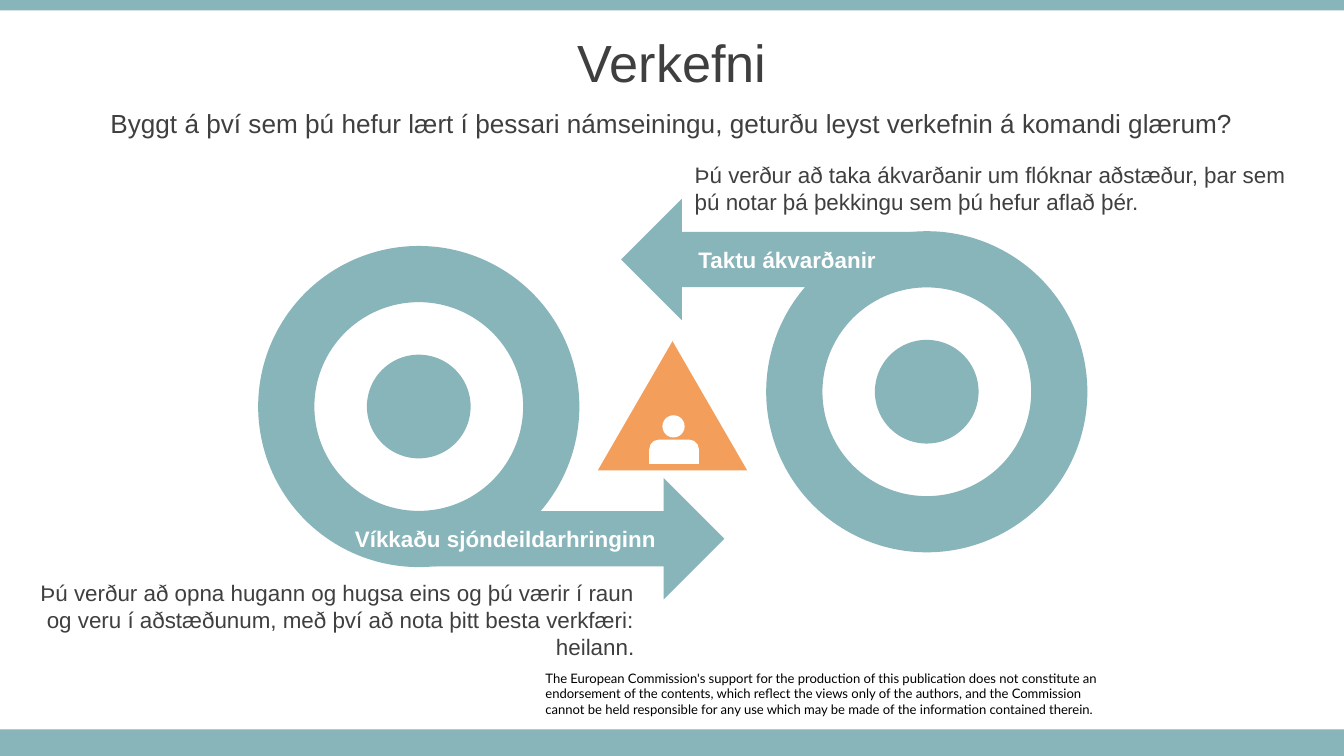
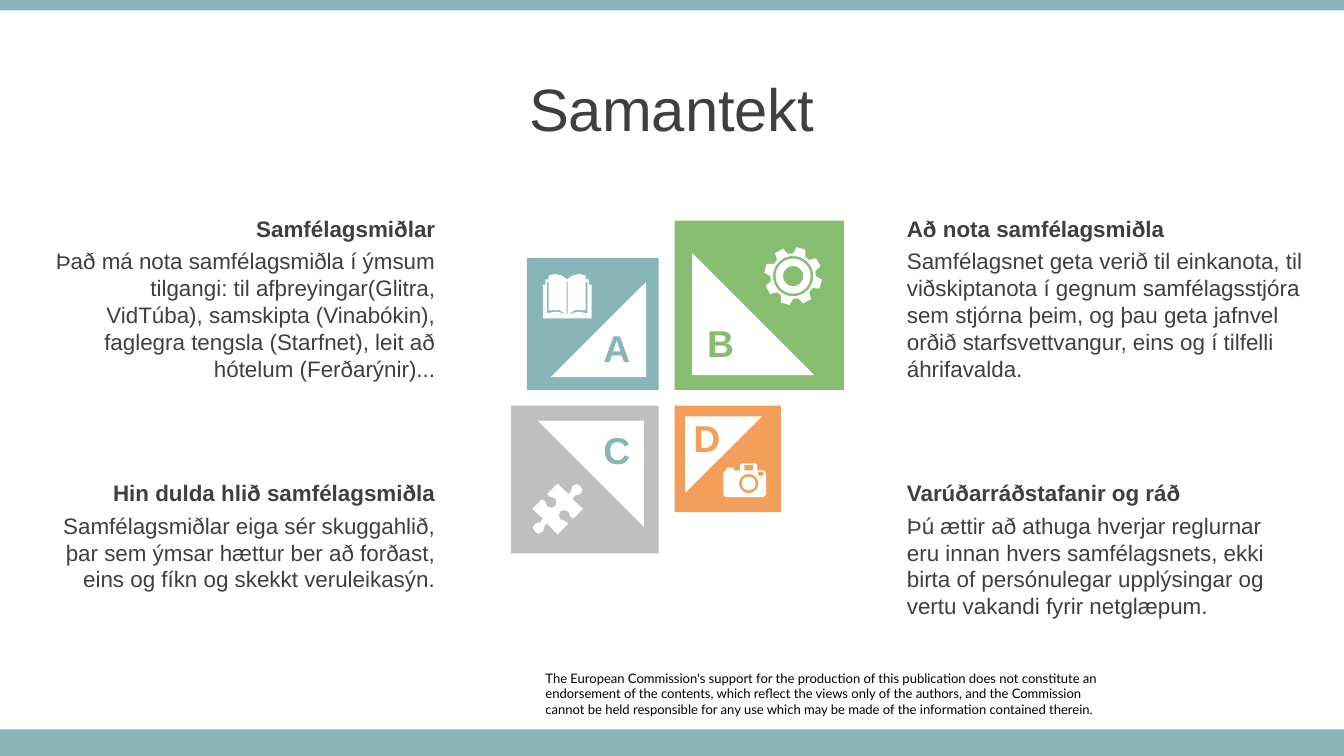
from math import cos, radians, sin

from pptx import Presentation
from pptx.dml.color import RGBColor
from pptx.enum.shapes import MSO_SHAPE
from pptx.enum.text import MSO_ANCHOR, PP_ALIGN
from pptx.util import Cm, Pt

LEFT, CENTER, RIGHT = PP_ALIGN.LEFT, PP_ALIGN.CENTER, PP_ALIGN.RIGHT
TOP, MIDDLE = MSO_ANCHOR.TOP, MSO_ANCHOR.MIDDLE
RECTANGLE, OVAL, DONUT = MSO_SHAPE.RECTANGLE, MSO_SHAPE.OVAL, MSO_SHAPE.DONUT
ARROW, TRIANGLE = MSO_SHAPE.RIGHT_ARROW, MSO_SHAPE.ISOSCELES_TRIANGLE
CORNER, SHOULDERS = MSO_SHAPE.RIGHT_TRIANGLE, MSO_SHAPE.ROUND_2_SAME_RECTANGLE
TITLE_ONLY = 5

COLORS = {
    "teal": "87B5BA", "green": "86BD70", "orange": "F39E5A", "gray": "BFBFBF",
    "text": "3F3F3F", "white": "FFFFFF", "black": "000000",
}
WIDTH, HEIGHT = 25.4, 14.29
UNITS_PER_CM = 1000
DISCLAIMER = (
    "The European Commission's support for the production of this publication "
    "does not constitute an endorsement of the contents, which reflect the views "
    "only of the authors, and the Commission",
    "cannot be held responsible for any use which may be made of the information "
    "contained therein.",
)


def color(name):
    return RGBColor.from_string(COLORS[name])


class Builder:
    """Holds the style and the current slide; all lengths are in centimetres."""

    def __init__(self):
        self.deck = Presentation()
        self.deck.slide_width, self.deck.slide_height = Cm(WIDTH), Cm(HEIGHT)
        self.page = None

    def new_page(self, title, top, size):
        self.page = self.deck.slides.add_slide(self.deck.slide_layouts[TITLE_ONLY])
        box = self.page.shapes.title
        box.left, box.top, box.width, box.height = Cm(0), Cm(top), Cm(WIDTH), Cm(1.6)
        self.fill_text(box, [title], size=size, align=CENTER, anchor=MIDDLE)
        self.shape(RECTANGLE, 0, 13.79, WIDTH, 0.5, "teal")
        self.shape(RECTANGLE, 0, 0, WIDTH, 0.2, "teal")
        box = self.text(10.31, 12.67, 10.59, 0.89, *DISCLAIMER,
                        size=7, font="Lato", fill="black")
        frame = box.text_frame
        frame.margin_left = frame.margin_right = Cm(0)
        frame.margin_top = frame.margin_bottom = Cm(0)

    def fill_text(self, box, lines, size=12, font="Arial", fill="text", bold=False,
                  align=LEFT, anchor=TOP, spacing=None):
        frame = box.text_frame
        frame.word_wrap, frame.vertical_anchor = True, anchor
        frame.text = "\n".join(lines)
        for para in frame.paragraphs:
            para.alignment, para.line_spacing = align, spacing
            para.font.name, para.font.size, para.font.bold = font, Pt(size), bold
            para.font.color.rgb = color(fill)

    def text(self, left, top, width, height, *lines, **style):
        box = self.page.shapes.add_textbox(Cm(left), Cm(top), Cm(width), Cm(height))
        self.fill_text(box, lines, **style)
        return box

    def paint(self, shape, fill):
        shape.shadow.inherit = False
        shape.fill.solid()
        shape.fill.fore_color.rgb = color(fill)
        shape.line.fill.background()

    def shape(self, kind, left, top, width, height, fill, turn=0, adjust=()):
        shape = self.page.shapes.add_shape(
            kind, Cm(left), Cm(top), Cm(width), Cm(height))
        shape.rotation = turn
        for index, value in enumerate(adjust):
            shape.adjustments[index] = value
        self.paint(shape, fill)

    def outline(self, *contours, fill="white"):
        """Draw closed contours as one shape; inner contours are holes."""
        scaled = [[(x * UNITS_PER_CM, y * UNITS_PER_CM) for x, y in contour]
                  for contour in contours]
        builder = self.page.shapes.build_freeform(
            *scaled[0][0], scale=Cm(1) / UNITS_PER_CM)
        builder.add_line_segments(scaled[0][1:], close=True)
        for contour in scaled[1:]:
            builder.move_to(*contour[0])
            builder.add_line_segments(contour[1:], close=True)
        self.paint(builder.convert_to_shape(), fill)


# Contours for the icons
def polar(x, y, radius, degrees):
    return x + radius * sin(radians(degrees)), y - radius * cos(radians(degrees))


def circle(x, y, radius):
    return [polar(x, y, radius, angle) for angle in range(0, 360, 8)]


def block(left, top, width, height):
    return [(left, top), (left + width, top),
            (left + width, top + height), (left, top + height)]


def draw_target(builder, left, top, turned):
    size, dot, arrow_width, arrow_height = 6.07, 1.96, 5.51, 2.29
    arrow_left, arrow_top = 3.3, 4.39
    if turned:
        arrow_left = size - arrow_left - arrow_width
        arrow_top = size - arrow_top - arrow_height
    turn, inset = 180 * turned, (size - dot) / 2
    builder.shape(DONUT, left, top, size, size, "teal", turn, [0.175])
    builder.shape(ARROW, left + arrow_left, top + arrow_top,
                  arrow_width, arrow_height, "teal", turn, [0.455, 0.5])
    builder.shape(OVAL, left + inset, top + inset, dot, dot, "teal")


def draw_book(builder, x=10.72):
    half = [(0, 5.28), (0.1, 5.21), (0.23, 5.18), (0.35, 5.21), (0.35, 5.28),
            (0.41, 5.28), (0.41, 5.38), (0.46, 5.38), (0.46, 6.02)]
    edge = [(0.35, 5.33), (0.38, 5.33), (0.38, 5.92), (0.2, 5.89),
            (0.02, 5.94), (0.15, 5.86), (0.35, 5.87)]
    cover = ([(x + dx, y) for dx, y in half]
             + [(x - dx, y) for dx, y in reversed(half[1:])])
    edges = [[(x + side * dx, y) for dx, y in edge] for side in (1, -1)]
    builder.outline(cover, *edges, block(x - 0.01, 5.33, 0.02, 0.6))


def draw_gear(builder, x=14.99, y=5.22):
    teeth = [polar(x, y, radius, 16 + 45 * tooth + offset)
             for tooth in range(8)
             for offset, radius in ((-16, 0.43), (-9, 0.55), (9, 0.55), (16, 0.43))]
    builder.outline(teeth, *(circle(x, y, radius) for radius in (0.38, 0.33, 0.19)))


def draw_puzzle(builder, x=10.54, y=9.62):
    half = [(0.48, 0), (0.3, 0.18), (0.24, 0.15), (0.2, 0.05), (0.12, 0.02),
            (0.05, 0.05), (0.02, 0.12), (0.05, 0.2), (0.14, 0.23), (0.2, 0.28),
            (0, 0.48), (-0.2, 0.28), (-0.24, 0.31), (-0.28, 0.43), (-0.36, 0.47),
            (-0.43, 0.43), (-0.47, 0.36), (-0.43, 0.28), (-0.32, 0.25), (-0.28, 0.18)]
    builder.outline([(x + side * dx, y + side * dy)
                     for side in (1, -1) for dx, dy in half])


def draw_camera(builder, x=14.15, y=9.14):
    body = [(13.67, 8.94), (13.72, 8.89), (13.74, 8.84), (13.87, 8.84),
            (13.87, 8.89), (13.99, 8.89), (13.99, 8.79), (14.02, 8.76),
            (14.28, 8.76), (14.31, 8.79), (14.31, 8.89), (14.43, 8.89),
            (14.48, 8.94), (14.48, 9.35), (14.43, 9.4), (13.72, 9.4), (13.67, 9.35)]
    builder.outline(body, circle(x, y, 0.18), circle(x, y, 0.13),
                    block(14.07, 8.79, 0.16, 0.1), block(14.33, 8.92, 0.1, 0.07))


def tasks_page(builder):
    builder.new_page("Verkefni", 0.36, 28)
    builder.text(0, 1.96, WIDTH, 0.79,
                 "Byggt á því sem þú hefur lært í þessari námseiningu, geturðu leyst "
                 "verkefnin á komandi glærum?",
                 size=14, align=CENTER, anchor=MIDDLE, spacing=0.9)
    draw_target(builder, 4.88, 4.65, turned=False)
    draw_target(builder, 14.48, 4.37, turned=True)

    # Person in the triangle
    builder.shape(TRIANGLE, 11.3, 6.45, 2.82, 2.44, "orange")
    builder.shape(OVAL, 12.52, 7.85, 0.42, 0.42, "white")
    builder.shape(SHOULDERS, 12.27, 8.31, 0.94, 0.46, "white", adjust=[0.4, 0])

    # Explanations and arrow labels
    builder.text(12.88, 2.92, 12.01, 1.8,
                 "Þú verður að taka ákvarðanir um flóknar aðstæður, þar sem þú notar "
                 "þá þekkingu sem þú hefur aflað þér.")
    builder.text(0.3, 10.82, 11.94, 2.31,
                 "Þú verður að opna hugann og hugsa eins og þú værir í raun og veru í "
                 "aðstæðunum, með því að nota þitt besta verkfæri: heilann.", align=RIGHT)
    builder.text(6.15, 9.8, 6.5, 1.27, "Víkkaðu sjóndeildarhringinn",
                 fill="white", bold=True, align=RIGHT)
    builder.text(12.95, 4.52, 6.5, 0.76, "Taktu ákvarðanir", fill="white", bold=True)


def summary_page(builder):
    builder.new_page("Samantekt", 1.24, 32)

    # Four squares around a common centre
    center_x, center_y, half_gap = 12.6, 7.52, 0.15
    # letter, side x, side y, size, fill, triangle (left, top, size, turn), label, ink
    squares = [
        ("A", -1, -1, 2.49, "teal", (10.41, 5.33, 1.8, 270), (11.1, 6.02), "teal"),
        ("B", 1, -1, 3.2, "green", (13.08, 4.78, 2.31, 0), (13.06, 5.92), "green"),
        ("C", -1, 1, 2.79, "gray", (10.16, 7.95, 2.01, 180), (11.1, 7.95), "teal"),
        ("D", 1, 1, 2.01, "orange", (12.95, 7.87, 1.45, 90), (12.8, 7.72), "orange"),
    ]
    for letter, side_x, side_y, size, fill, triangle, label, ink in squares:
        left = center_x + (half_gap if side_x > 0 else -half_gap - size)
        top = center_y + (half_gap if side_y > 0 else -half_gap - size)
        builder.shape(RECTANGLE, left, top, size, size, fill)
        x, y, leg, turn = triangle
        builder.shape(CORNER, x, y, leg, leg, "white", turn)
        builder.text(*label, 1.12, 1.12, letter,
                     size=20, fill=ink, bold=True, align=CENTER)
    for draw in (draw_book, draw_puzzle, draw_gear, draw_camera):
        draw(builder)

    # Headings with their explanations
    notes = [
        (0.71, 3.94, 7.77, 2.82, RIGHT, "Samfélagsmiðlar",
         "Það má nota samfélagsmiðla í ýmsum tilgangi: til afþreyingar(Glitra, "
         "VidTúba), samskipta (Vinabókin), faglegra tengsla (Starfnet), leit að "
         "hótelum (Ferðarýnir)..."),
        (0.51, 8.94, 7.97, 1.8, RIGHT, "Hin dulda hlið samfélagsmiðla",
         "Samfélagsmiðlar eiga sér skuggahlið, þar sem ýmsar hættur ber að forðast, "
         "eins og fíkn og skekkt veruleikasýn."),
        (16.89, 3.94, 8, 2.82, LEFT, "Að nota samfélagsmiðla",
         "Samfélagsnet geta verið til einkanota, til viðskiptanota í gegnum "
         "samfélagsstjóra sem stjórna þeim, og þau geta jafnvel orðið "
         "starfsvettvangur, eins og í tilfelli áhrifavalda."),
        (16.89, 8.94, 7.6, 2.31, LEFT, "Varúðarráðstafanir og ráð",
         "Þú ættir að athuga hverjar reglurnar eru innan hvers samfélagsnets, ekki "
         "birta of persónulegar upplýsingar og vertu vakandi fyrir netglæpum."),
    ]
    for left, top, width, height, align, heading, body in notes:
        builder.text(left, top + 0.61, width, height, body, align=align)
        builder.text(left, top, width, 0.76, heading, bold=True, align=align)


def main():
    builder = Builder()
    tasks_page(builder)
    summary_page(builder)
    builder.deck.save("out.pptx")


if __name__ == "__main__":
    main()
